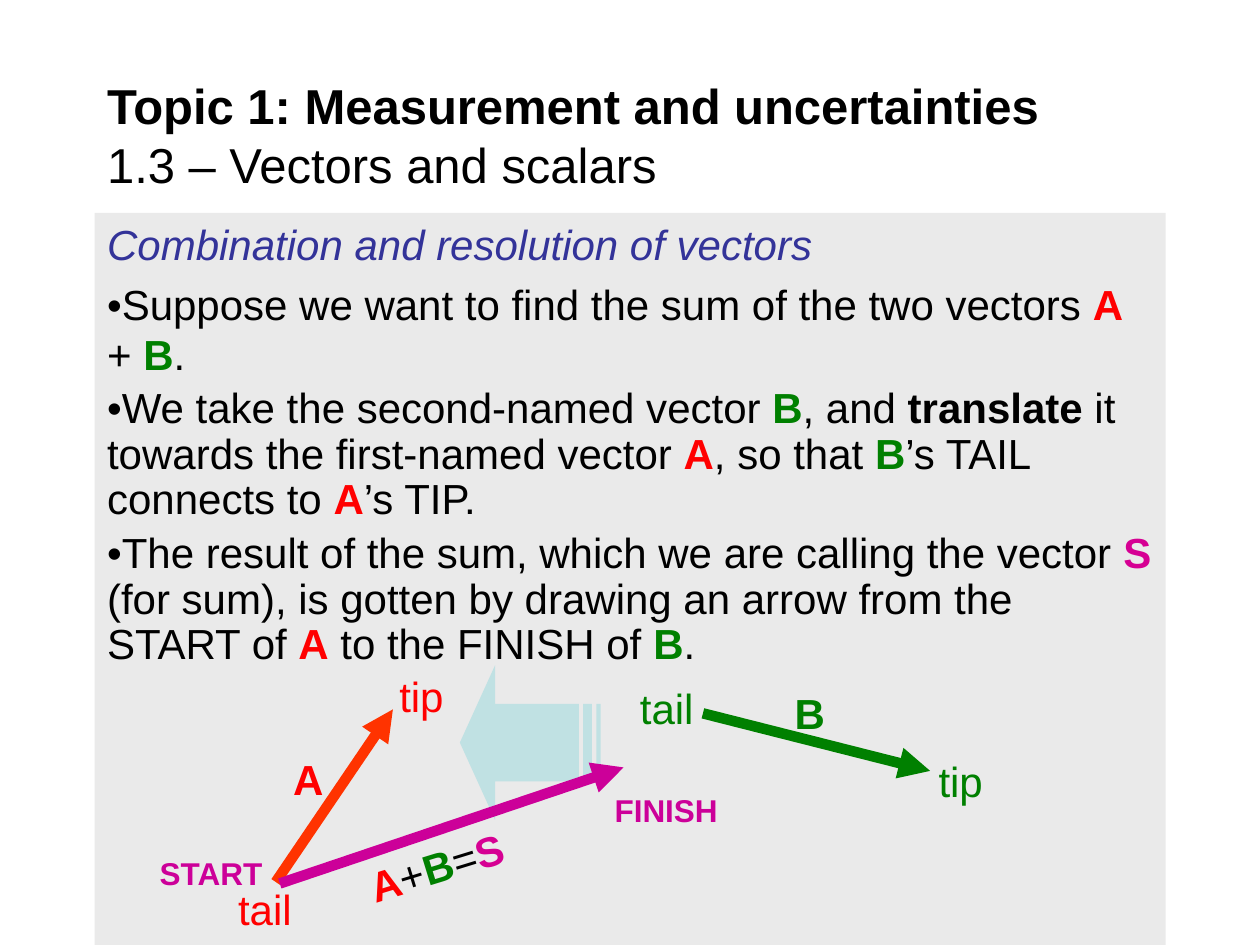
from typing import NamedTuple

from lxml import etree
from pptx import Presentation
from pptx import util as u
from pptx.dml.color import RGBColor
from pptx.enum import shapes, text
from pptx.oxml.ns import qn

COLORS = {
    "black": "000000", "panel": "EAEAEA", "heading": "333399",
    "red": "FF0000", "orange": "FF3300", "green": "008000",
    "pink": "D60093", "magenta": "CC0099", "pale": "BBE0E3",
}
# Words set in bold wherever they stand alone between bars
EMPHASIS = {"A": "red", "B": "green", "S": "pink", "translate": "black"}
FONT = "Arial"


class Vector(NamedTuple):
    x1: float
    y1: float
    x2: float
    y2: float
    color: str


class Label(NamedTuple):
    text: str
    x: float
    y: float
    w: float
    color: str = "black"
    h: float = 1.27
    size: int = 24
    bold: bool = False
    rotation: float = 0


VECTORS = [
    Vector(5.56, 17.78, 7.92, 14.3, "orange"),
    Vector(14.17, 14.38, 18.75, 15.54, "green"),
    Vector(5.64, 17.81, 12.57, 15.47, "magenta"),
]
LABELS = [
    Label("A", 5.66, 15.06, 1.19),
    Label("B", 15.77, 13.74, 1.19),
    Label("tail", 12.65, 13.64, 1.8, "green"),
    Label("tail", 4.55, 17.68, 1.8, "red"),
    Label("tip", 18.67, 15.11, 1.8, "green"),
    Label("tip", 7.8, 13.39, 1.8, "red"),
    Label("A|+|B|=|S", 7.11, 16.48, 5.72, rotation=342.9),
    Label("START", 2.97, 17.09, 2.67, "magenta", 1.02, 18, True),
    Label("FINISH", 12.14, 15.82, 2.79, "magenta", 1.02, 18, True),
]
BULLETS = [
    ("•Suppose we want to find the sum of the two vectors |A| + |B|.", 1.0),
    ("•We take the second-named vector |B|, and |translate| it towards the "
     "first-named vector |A|, so that |B|’s TAIL connects to |A|’s TIP.", 0.9),
    ("•The result of the sum, which we are calling the vector |S| (for sum), "
     "is gotten by drawing an arrow from the START of |A| to the FINISH of "
     "|B|.", 0.9),
]


def rgb(name: str) -> RGBColor:
    return RGBColor.from_string(COLORS[name])


def write(p, markup: str, size: int, color: str = "black", bold: bool = False) -> None:
    """Fill a paragraph; bars separate runs, and EMPHASIS words get bold and colour."""
    p.alignment = text.PP_ALIGN.LEFT
    p.font.name, p.font.size = FONT, u.Pt(size)
    for part in markup.split("|"):
        r = p.add_run()
        r.text = part
        r.font.name, r.font.size = FONT, u.Pt(size)
        r.font.bold = bold or part in EMPHASIS
        r.font.color.rgb = rgb(EMPHASIS.get(part, color))


def add_block(s, kind, x: float, y: float, w: float, h: float, color: str):
    sp = s.shapes.add_shape(kind, u.Cm(x), u.Cm(y), u.Cm(w), u.Cm(h))
    sp.shadow.inherit = False
    sp.fill.solid()
    sp.fill.fore_color.rgb = rgb(color)
    sp.line.fill.background()
    return sp


def add_title(s) -> None:
    sp = s.shapes.add_textbox(u.Cm(1.91), u.Cm(1.47), u.Cm(21.59), u.Cm(2.49))
    tf = sp.text_frame
    tf.word_wrap = True
    tf.vertical_anchor = text.MSO_ANCHOR.MIDDLE
    write(tf.paragraphs[0], "Topic 1: Measurement and uncertainties", 28, bold=True)
    write(tf.add_paragraph(), "1.3 – Vectors and scalars", 28)


def add_panel(s) -> None:
    sp = add_block(s, shapes.MSO_SHAPE.RECTANGLE, 1.91, 4.29, 21.59, 14.76, "panel")
    tf = sp.text_frame
    tf.word_wrap = True
    tf.vertical_anchor = text.MSO_ANCHOR.TOP
    p = tf.paragraphs[0]
    write(p, "Combination and resolution of vectors", 24, "heading")
    p.runs[0].font.italic = True
    for markup, spacing in BULLETS:
        p = tf.add_paragraph()
        p.space_before, p.line_spacing = u.Pt(5), spacing
        write(p, markup, 24)


def add_translation_arrow(s) -> None:
    sp = add_block(s, shapes.MSO_SHAPE.STRIPED_RIGHT_ARROW, 9.27, 13.41, 2.84, 3.12, "pale")
    sp.rotation = 180
    sp.adjustments[0], sp.adjustments[1] = 0.5, 0.25
    color = sp.fill._xPr.find(qn("a:solidFill"))[0]
    etree.SubElement(color, qn("a:alpha"), val="89000")


def add_vector(s, v: Vector) -> None:
    line = s.shapes.add_connector(
        shapes.MSO_CONNECTOR.STRAIGHT, u.Cm(v.x1), u.Cm(v.y1), u.Cm(v.x2), u.Cm(v.y2))
    line.line.color.rgb = rgb(v.color)
    line.line.width = u.Pt(6)
    etree.SubElement(line.line._get_or_add_ln(), qn("a:tailEnd"), type="triangle")
    etree.SubElement(line._element.spPr, qn("a:effectLst"))


def add_label(s, label: Label) -> None:
    sp = s.shapes.add_textbox(u.Cm(label.x), u.Cm(label.y), u.Cm(label.w), u.Cm(label.h))
    sp.rotation = label.rotation
    tf = sp.text_frame
    tf.word_wrap = True
    write(tf.paragraphs[0], label.text, label.size, label.color, label.bold)


def main() -> None:
    prs = Presentation()
    prs.slide_width, prs.slide_height = u.Cm(25.4), u.Cm(19.05)
    s = prs.slides.add_slide(prs.slide_layouts[6])
    add_panel(s)
    add_title(s)
    add_translation_arrow(s)
    for v in VECTORS:
        add_vector(s, v)
    for label in LABELS:
        add_label(s, label)
    prs.save("out.pptx")


if __name__ == "__main__":
    main()
